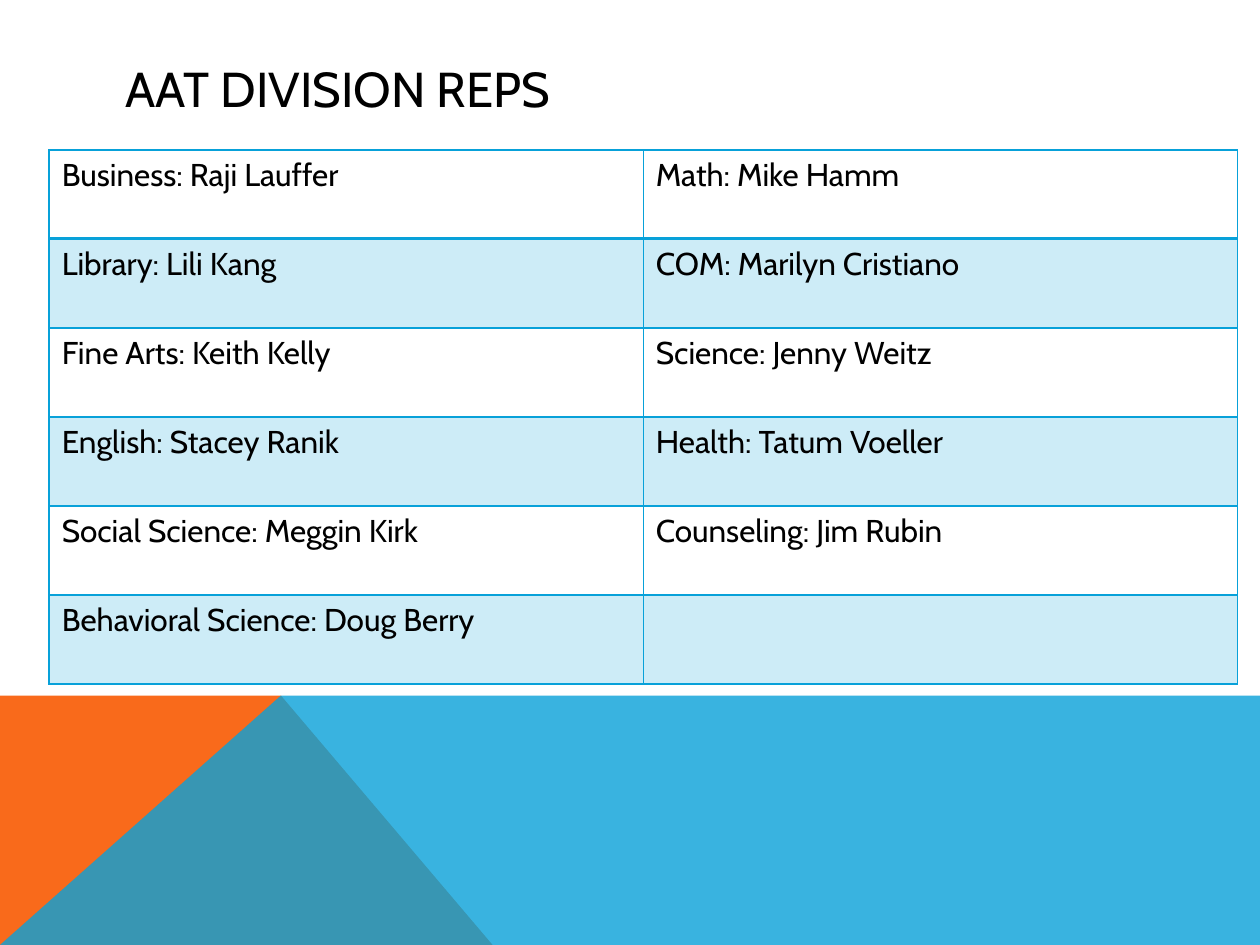
from dataclasses import dataclass
from lxml.etree import SubElement
from pptx import Presentation
from pptx.dml.color import RGBColor
from pptx.enum.text import MSO_ANCHOR
from pptx.oxml.ns import qn
from pptx.util import Inches, Pt


@dataclass(frozen=True)
class Theme:
    font: str = "Cabin"
    ink: str = "000000"
    blue: str = "08A1D9"
    orange: str = "F96A1B"
    title: int = 28
    body: int = 18
    thin: int = 1
    thick: int = 2


@dataclass(frozen=True)
class Wedge:
    points: tuple
    color: str
    alpha: int


THEME = Theme()
WEDGES = (
    Wedge(((0, 7.5), (0, 5.52), (2.23, 5.52), (3.91, 7.5)), THEME.orange, 100),
    Wedge(((0, 7.5), (2.23, 5.52), (10, 5.52), (10, 7.5)), THEME.blue, 80),
)
REPS = (
    ("Business: Raji Lauffer", "Math: Mike Hamm"),
    ("Library: Lili Kang", "COM: Marilyn Cristiano"),
    ("Fine Arts: Keith Kelly", "Science: Jenny Weitz"),
    ("English: Stacey Ranik", "Health: Tatum Voeller"),
    ("Social Science: Meggin Kirk", "Counseling: Jim Rubin"),
    ("Behavioral Science: Doug Berry", ""),
)


def paint(fill, holder, color: str, alpha: int) -> None:
    fill.solid()
    fill.fore_color.rgb = RGBColor.from_string(color)
    if alpha < 100:
        tint = holder.find(qn("a:solidFill"))[0]
        SubElement(tint, qn("a:alpha"), val=str(alpha * 1000))


def write(frame, text: str, size: int) -> None:
    frame.word_wrap = True
    line = frame.paragraphs[0]
    line.text = text
    line.font.name = THEME.font
    line.font.size = Pt(size)
    line.font.color.rgb = RGBColor.from_string(THEME.ink)


def draw_wedge(slide, wedge: Wedge) -> None:
    start, *rest = [(Inches(x), Inches(y)) for x, y in wedge.points]
    pen = slide.shapes.build_freeform(*start)
    pen.add_line_segments(rest, close=True)
    shape = pen.convert_to_shape()
    shape.shadow.inherit = False
    shape.line.fill.background()
    paint(shape.fill, shape._element.spPr, wedge.color, wedge.alpha)


def draw_title(slide, text: str) -> None:
    box = slide.shapes.add_textbox(Inches(0.9), Inches(0.4), Inches(8.22), Inches(0.6))
    box.text_frame.vertical_anchor = MSO_ANCHOR.MIDDLE
    write(box.text_frame, text, THEME.title)


def edge(cell, side: str, width: int) -> None:
    line = SubElement(cell._tc.get_or_add_tcPr(), qn(f"a:ln{side}"), w=str(Pt(width)))
    fill = SubElement(line, qn("a:solidFill"))
    SubElement(fill, qn("a:srgbClr"), val=THEME.blue)


def draw_table(slide, reps: tuple) -> None:
    frame = slide.shapes.add_table(
        len(reps), len(reps[0]), Inches(0.39), Inches(1.19), Inches(9.43), Inches(4.24)
    )
    table = frame.table
    table.first_row = table.horz_banding = False
    for r, names in enumerate(reps):
        for c, name in enumerate(names):
            cell = table.cell(r, c)
            write(cell.text_frame, name, THEME.body)
            heavy = {0: "B", 1: "T"}.get(r)
            for side in "LRTB":
                edge(cell, side, THEME.thick if side == heavy else THEME.thin)
            if r % 2:
                paint(cell.fill, cell._tc.tcPr, THEME.blue, 20)
            else:
                cell.fill.background()


def main() -> None:
    deck = Presentation()
    deck.slide_width, deck.slide_height = Inches(10), Inches(7.5)
    slide = deck.slides.add_slide(deck.slide_layouts[6])
    for wedge in WEDGES:
        draw_wedge(slide, wedge)
    draw_title(slide, "AAT DIVISION REPS")
    draw_table(slide, REPS)
    deck.save("out.pptx")


if __name__ == "__main__":
    main()
